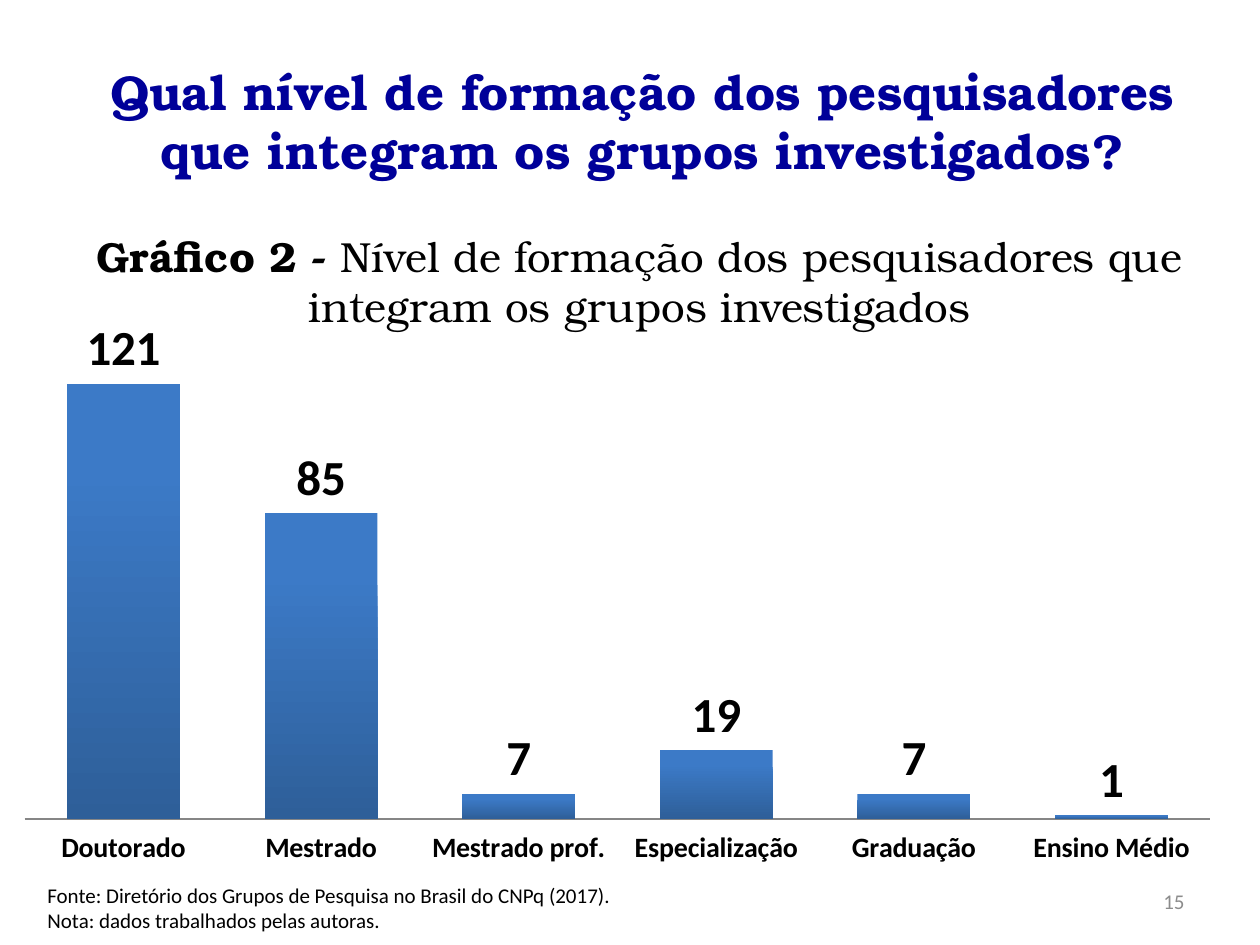
from dataclasses import dataclass

from lxml import etree
from pptx import Presentation
from pptx.chart.data import CategoryChartData
from pptx.dml.color import RGBColor
from pptx.enum.chart import XL_CHART_TYPE, XL_LABEL_POSITION, XL_TICK_LABEL_POSITION, XL_TICK_MARK
from pptx.enum.text import MSO_ANCHOR, MSO_AUTO_SIZE, PP_ALIGN
from pptx.oxml.ns import qn
from pptx.util import Emu, Pt

LEFT, CENTER, RIGHT = PP_ALIGN.LEFT, PP_ALIGN.CENTER, PP_ALIGN.RIGHT
TOP, MIDDLE = MSO_ANCHOR.TOP, MSO_ANCHOR.MIDDLE
NO_TICK = XL_TICK_MARK.NONE

NAVY = RGBColor(0x00, 0x00, 0x99)
BLACK = RGBColor(0x00, 0x00, 0x00)
GRAY = RGBColor(0x8C, 0x8C, 0x8C)
AXIS_GRAY = RGBColor(0x86, 0x86, 0x86)
BAR_LIGHT = RGBColor(0x3C, 0x7A, 0xC7)
BAR_DARK = RGBColor(0x2E, 0x5F, 0x99)

SERIF, SANS = "TeX Gyre Bonum", "Calibri"
PX_PER_INCH = 126
TITLE_ONLY = 5

LEVELS = {
    "Doutorado": 121,
    "Mestrado": 85,
    "Mestrado prof.": 7,
    "Especialização": 19,
    "Graduação": 7,
    "Ensino Médio": 1,
}
PLOT_LAYOUT = {"x": 0.02, "y": 0.02, "w": 0.96, "h": 0.89}


@dataclass(frozen=True)
class Box:
    left: int
    top: int
    width: int
    height: int

    def emu(self) -> tuple[Emu, ...]:
        return tuple(px(n) for n in (self.left, self.top, self.width, self.height))


@dataclass(frozen=True)
class Caption:
    box: Box
    runs: tuple[tuple[str, bool], ...]  # text and whether it is bold
    size: int
    font: str
    color: RGBColor
    align: PP_ALIGN
    anchor: MSO_ANCHOR = TOP
    auto_size: MSO_AUTO_SIZE = MSO_AUTO_SIZE.SHAPE_TO_FIT_TEXT


TITLE = Caption(
    Box(0, 55, 1221, 131),
    (("Qual nível de formação dos pesquisadores que integram os grupos investigados?", True),),
    28, SERIF, NAVY, CENTER,
)
CHART_BOX = Box(0, 304, 1235, 566)
CAPTIONS = (
    Caption(
        Box(35, 876, 1225, 63),
        (("Fonte: Diretório dos Grupos de Pesquisa no Brasil do CNPq (2017).\v"
          "Nota: dados trabalhados pelas autoras.", False),),
        12, SANS, BLACK, LEFT,
    ),
    Caption(
        Box(54, 224, 1171, 115),
        (("Gráfico 2 - ", True),
         ("Nível de formação dos pesquisadores que integram os grupos investigados", False)),
        24, SERIF, BLACK, CENTER,
    ),
    Caption(Box(903, 876, 294, 50), (("15", False),), 12, SANS, GRAY, RIGHT,
            MIDDLE, MSO_AUTO_SIZE.NONE),
)


def px(length: int) -> Emu:
    return Emu(round(length * 914400 / PX_PER_INCH))


def style_font(font, size: int, name: str, color: RGBColor, bold: bool) -> None:
    font.size, font.name, font.bold = Pt(size), name, bold
    font.color.rgb = color


def write_caption(shape, caption: Caption) -> None:
    shape.left, shape.top, shape.width, shape.height = caption.box.emu()
    frame = shape.text_frame
    frame.word_wrap = True
    frame.auto_size = caption.auto_size
    frame.vertical_anchor = caption.anchor
    paragraph = frame.paragraphs[0]
    paragraph.alignment = caption.align
    for text, bold in caption.runs:
        if "\v" in text:
            paragraph.text = text
            runs = paragraph.runs
        else:
            run = paragraph.add_run()
            run.text = text
            runs = (run,)
        for run in runs:
            style_font(run.font, caption.size, caption.font, caption.color, bold)


def fix_plot_area(chart) -> None:
    """Pin the inner plot area to fixed fractions of the chart."""
    plot_area = chart.plots[0]._element.getparent()
    for old in plot_area.findall(qn("c:layout")):
        plot_area.remove(old)
    layout = etree.Element(qn("c:layout"))
    plot_area.insert(0, layout)
    manual = etree.SubElement(layout, qn("c:manualLayout"))
    settings = {"layoutTarget": "inner", "xMode": "edge", "yMode": "edge", **PLOT_LAYOUT}
    for tag, value in settings.items():
        etree.SubElement(manual, qn(f"c:{tag}")).set("val", str(value))


def add_level_chart(slide) -> None:
    data = CategoryChartData()
    data.categories = list(LEVELS)
    data.add_series("Series 1", list(LEVELS.values()))
    chart = slide.shapes.add_chart(
        XL_CHART_TYPE.COLUMN_CLUSTERED, *CHART_BOX.emu(), data).chart
    chart.has_legend = False
    chart.has_title = False
    style_font(chart.font, 10, SANS, BLACK, False)

    category_axis = chart.category_axis
    category_axis.major_tick_mark = category_axis.minor_tick_mark = NO_TICK
    category_axis.tick_label_position = XL_TICK_LABEL_POSITION.LOW
    category_axis.format.line.color.rgb = AXIS_GRAY
    style_font(category_axis.tick_labels.font, 16, SANS, BLACK, True)

    value_axis = chart.value_axis
    value_axis.minimum_scale, value_axis.maximum_scale = 0, 140
    value_axis.has_major_gridlines = False
    value_axis.visible = False

    plot = chart.plots[0]
    plot.gap_width = 75
    plot.vary_by_categories = False
    plot.has_data_labels = True
    labels = plot.data_labels
    labels.show_value = True
    labels.position = XL_LABEL_POSITION.OUTSIDE_END
    style_font(labels.font, 28, SANS, BLACK, True)

    fill = plot.series[0].format.fill
    fill.gradient()
    fill.gradient_angle = 270
    for stop, color, position in zip(fill.gradient_stops, (BAR_LIGHT, BAR_DARK), (0.2, 1)):
        stop.color.rgb = color
        stop.position = position
    fix_plot_area(chart)


def main() -> None:
    presentation = Presentation()
    presentation.slide_width, presentation.slide_height = px(1260), px(945)
    slide = presentation.slides.add_slide(presentation.slide_layouts[TITLE_ONLY])

    title = slide.shapes.title
    write_caption(title, TITLE)
    title.text_frame.margin_left = px(76)

    add_level_chart(slide)
    for caption in CAPTIONS:
        write_caption(slide.shapes.add_textbox(*caption.box.emu()), caption)
    presentation.save("out.pptx")


if __name__ == "__main__":
    main()
